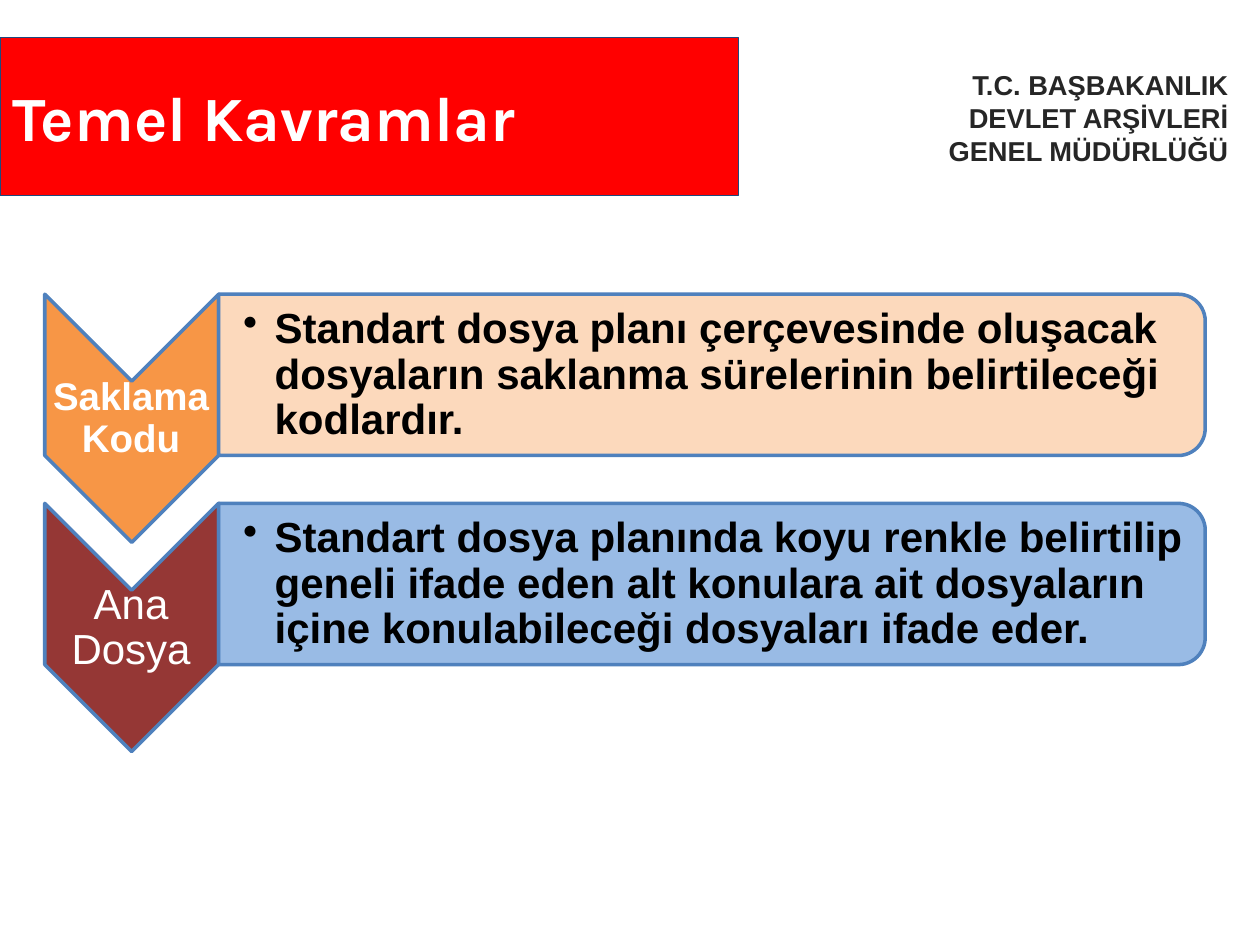
from lxml import etree
from pptx import Presentation
from pptx.dml.color import RGBColor
from pptx.enum.shapes import MSO_SHAPE
from pptx.enum.text import MSO_ANCHOR, MSO_AUTO_SIZE, PP_ALIGN
from pptx.oxml.ns import qn
from pptx.util import Inches, Pt

CHEVRON, ROUND_TOP = MSO_SHAPE.CHEVRON, MSO_SHAPE.ROUND_2_SAME_RECTANGLE
RECT, MIDDLE = MSO_SHAPE.RECTANGLE, MSO_ANCHOR.MIDDLE
LEFT, CENTER, RIGHT = PP_ALIGN.LEFT, PP_ALIGN.CENTER, PP_ALIGN.RIGHT
COLORS = {
    "white": "FFFFFF", "black": "000000", "red": "FF0000", "navy": "1F497D",
    "gray": "262626", "blue": "4F81BD", "orange": "F79646", "peach": "FCD5B5",
    "maroon": "953735", "sky": "8EB4E3",
}


def paint(sp, fill, line, width):
    sp.fill.solid()
    sp.fill.fore_color.rgb = RGBColor.from_string(COLORS[fill])
    sp.line.color.rgb = RGBColor.from_string(COLORS[line])
    sp.line.width = Pt(width)
    sp.shadow.inherit = False


def write(sp, lines, size, color, align, bold=True, font="Arial"):
    tf = sp.text_frame
    tf.word_wrap = True
    tf.auto_size = MSO_AUTO_SIZE.NONE
    tf.vertical_anchor = MIDDLE
    tf.text = "\n".join(lines)
    for p in tf.paragraphs:
        p.alignment = align
        p.font.name = font
        p.font.size = Pt(size)
        p.font.bold = bold
        p.font.color.rgb = RGBColor.from_string(COLORS[color])
    return tf


prs = Presentation()
prs.slide_width, prs.slide_height = Inches(10), Inches(7.5)
s = prs.slides.add_slide(prs.slide_layouts[5])

# Title banner
title = s.shapes.title
title.left, title.top = Inches(0), Inches(0.3)
title.width, title.height = Inches(5.86), Inches(1.25)
paint(title, "red", "navy", 0.75)
write(title, ["Temel Kavramlar"], 36, "white", LEFT, font="Karla")

# Institution name
sp = s.shapes.add_shape(RECT, Inches(6.02), Inches(0.31), Inches(3.83), Inches(1.25))
paint(sp, "white", "white", 0.75)
write(sp, ["T.C. BAŞBAKANLIK", "DEVLET ARŞİVLERİ", "GENEL MÜDÜRLÜĞÜ"],
      15.6, "gray", RIGHT)

# Concept rows: chevron label and definition panel
concepts = [
    ("Saklama Kodu", 22, True, "orange", "peach",
     "Standart dosya planı çerçevesinde oluşacak dosyaların saklanma "
     "sürelerinin belirtileceği kodlardır."),
    ("Ana Dosya", 24, False, "maroon", "sky",
     "Standart dosya planında koyu renkle belirtilip geneli ifade eden alt "
     "konulara ait dosyaların içine konulabileceği dosyaları ifade eder."),
]
for i, (label, size, bold, dark, light, definition) in enumerate(concepts):
    dy = 1.66 * i

    sp = s.shapes.add_shape(CHEVRON, Inches(0.06), Inches(2.63 + dy),
                            Inches(1.97), Inches(1.38))
    sp.rotation = 90
    paint(sp, dark, "blue", 2)

    sp = s.shapes.add_textbox(Inches(0.35), Inches(3.03 + dy), Inches(1.38), Inches(0.59))
    tf = write(sp, [label], size, "white", CENTER, bold)
    tf.margin_left = tf.margin_right = tf.margin_top = tf.margin_bottom = Inches(0.02)
    tf.paragraphs[0].line_spacing = 0.9

    sp = s.shapes.add_shape(ROUND_TOP, Inches(5.01), Inches(-0.94 + dy),
                            Inches(1.28), Inches(7.83))
    sp.rotation = 90
    paint(sp, light, "blue", 2)
    rgb = sp.fill._xPr.find(qn("a:solidFill")).find(qn("a:srgbClr"))
    etree.SubElement(rgb, qn("a:alpha"), val="90000")

    sp = s.shapes.add_textbox(Inches(1.74), Inches(2.4 + dy), Inches(7.77), Inches(1.16))
    tf = write(sp, [definition], 24, "black", LEFT)
    tf.margin_left = Inches(0.19)
    tf.margin_right = tf.margin_top = tf.margin_bottom = Inches(0.02)
    p = tf.paragraphs[0]
    p.line_spacing = 0.9
    pPr = p._p.get_or_add_pPr()
    pPr.set("marL", str(Inches(0.25)))
    pPr.set("indent", str(Inches(-0.25)))
    bullet = etree.Element(qn("a:buChar"), char="•")
    pPr.find(qn("a:defRPr")).addprevious(bullet)

prs.save("out.pptx")
